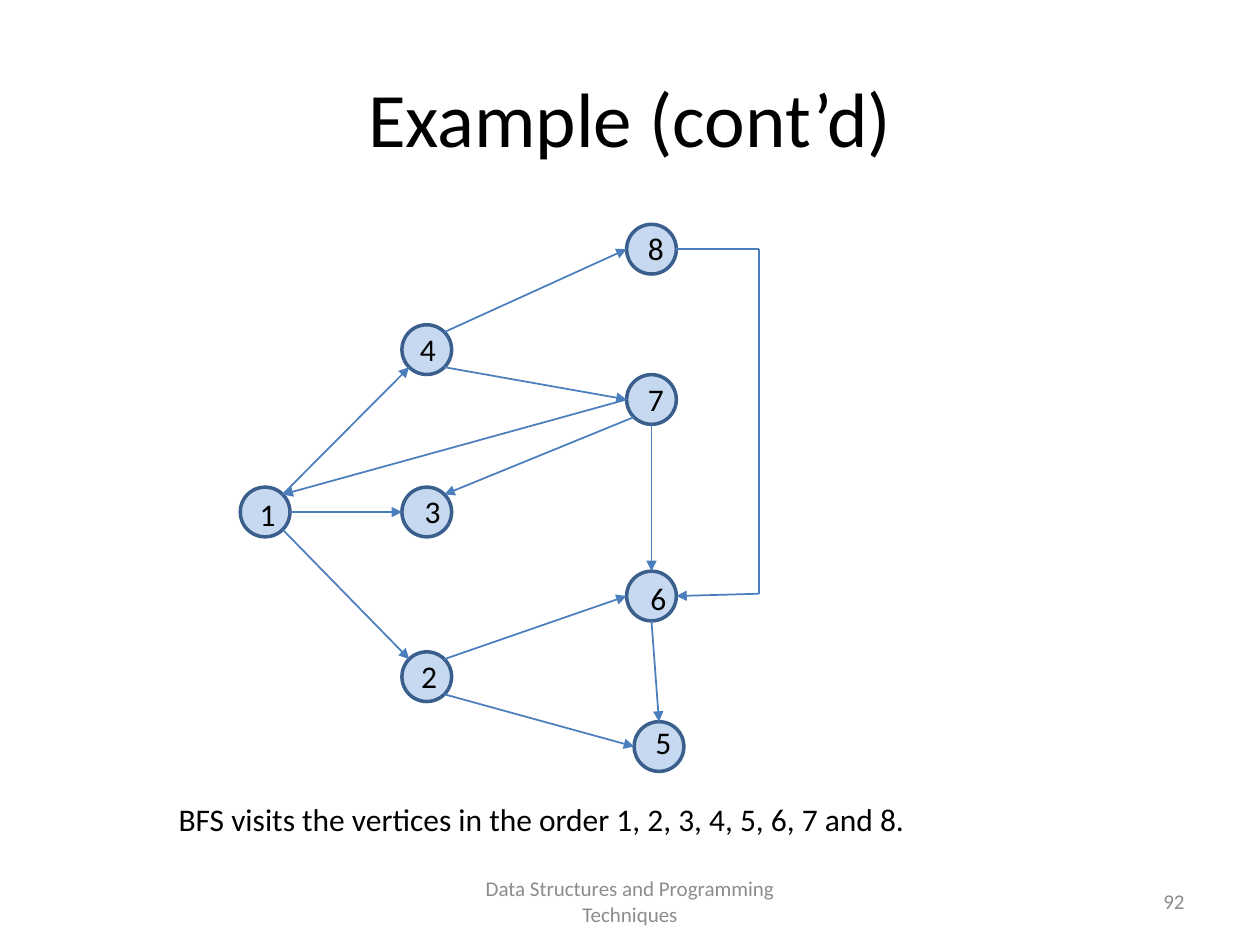
import math

from lxml import etree
from pptx import Presentation
from pptx import util as u
from pptx.dml.color import RGBColor
from pptx.enum import shapes, text
from pptx.oxml.ns import qn

FONT = "Calibri"
BLACK, GREY = "000000", "8C8C8C"
NODE_FILL, NODE_LINE, EDGE_LINE = "C6D9F1", "3A5F8C", "4B7EBC"
DIAMETER = 28.4
LABEL_SIZE = (20.2, 28.8)

# vertex: (left, top) of its circle, (left, top) of its label
VERTICES = {
    1: ((137.3, 278.4), (141.1, 279.4)),
    2: ((229.7, 372.5), (233.3, 372.2)),
    3: ((229.7, 278.4), (235.4, 277.9)),
    4: ((229.7, 185.6), (232.6, 185)),
    8: ((358.1, 128.2), (362.9, 127.4)),
    5: ((362.4, 412.4), (367.2, 409.7)),
    6: ((358.1, 326.4), (364.3, 327.6)),
    7: ((358.1, 214.1), (362.9, 213.8)),
}

# direction of each contact point on a circle, in degrees clockwise from the right
ANGLES = {"right": 0, "bottom right": 45, "bottom": 90, "bottom left": 135,
          "left": 180, "top left": 225, "top": 270, "top right": 315}

EDGES = [
    (1, "top right", 4, "bottom left"),
    (1, "right", 3, "left"),
    (1, "bottom right", 2, "top left"),
    (2, "top right", 6, "left"),
    (2, "bottom right", 5, "left"),
    (4, "top right", 8, "left"),
    (4, "bottom right", 7, "left"),
    (7, "left", 1, "top right"),
    (7, "bottom left", 3, "top right"),
    (7, "bottom", 6, "top"),
    (6, "bottom", 5, "top"),
]


def rgb(value):
    return RGBColor.from_string(value)


def points(*values):
    return [u.Pt(value) for value in values]


def style_paragraph(para, size, color, align):
    para.alignment = align
    para.font.name = FONT
    para.font.size = u.Pt(size)
    para.font.color.rgb = rgb(color)


def add_title(page, words):
    title = page.shapes.title
    title.left, title.top, title.width, title.height = points(36, 21.6, 648, 90)
    title.text_frame.text = words
    title.text_frame.vertical_anchor = text.MSO_ANCHOR.MIDDLE
    style_paragraph(title.text_frame.paragraphs[0], 44, BLACK, text.PP_ALIGN.CENTER)


def add_text(page, words, place, size=18, color=BLACK, align=text.PP_ALIGN.LEFT,
             anchor=text.MSO_ANCHOR.TOP):
    box = page.shapes.add_textbox(*points(*place))
    frame = box.text_frame
    frame.word_wrap = True
    frame.vertical_anchor = anchor
    frame.text = words
    style_paragraph(frame.paragraphs[0], size, color, align)
    return frame


def add_vertex(page, place):
    circle = page.shapes.add_shape(
        shapes.MSO_SHAPE.OVAL, *points(*place, DIAMETER, DIAMETER))
    circle.shadow.inherit = False
    circle.fill.solid()
    circle.fill.fore_color.rgb = rgb(NODE_FILL)
    circle.line.color.rgb = rgb(NODE_LINE)
    circle.line.width = u.Pt(2)


def add_label(page, vertex, place):
    frame = add_text(page, str(vertex), (*place, *LABEL_SIZE),
                     align=text.PP_ALIGN.CENTER)
    frame.margin_right = u.Pt(3.6)


def contact(vertex, side):
    """Return the point on the vertex's circle that faces the given side."""
    left, top = VERTICES[vertex][0]
    radius = DIAMETER / 2
    angle = math.radians(ANGLES[side])
    return (left + radius + radius * math.cos(angle),
            top + radius + radius * math.sin(angle))


def add_line(page, start, end, arrow=True):
    line = page.shapes.add_connector(
        shapes.MSO_CONNECTOR.STRAIGHT, *points(*start, *end))
    line.line.color.rgb = rgb(EDGE_LINE)
    line.line.width = u.Pt(1)
    if arrow:
        etree.SubElement(line.line._get_or_add_ln(), qn("a:tailEnd"), type="triangle")
    etree.SubElement(line._element.spPr, qn("a:effectLst"))


def add_detour(page):
    """Lead the edge from 8 to 6 around the right side of the graph."""
    start, end = contact(8, "right"), contact(6, "right")
    upper, lower = (433.6, start[1]), (433.6, 339.3)
    add_line(page, start, upper, arrow=False)
    add_line(page, upper, lower, arrow=False)
    add_line(page, lower, end)


def main():
    deck = Presentation()
    deck.slide_width, deck.slide_height = points(720, 540)
    page = deck.slides.add_slide(deck.slide_layouts[5])

    add_title(page, "Example (cont’d)")
    add_text(page, "Data Structures and Programming Techniques",
             (246, 500.5, 228, 28.8), 12, GREY,
             text.PP_ALIGN.CENTER, text.MSO_ANCHOR.MIDDLE)
    add_text(page, "92", (516, 500.5, 168, 28.8), 12, GREY,
             text.PP_ALIGN.RIGHT, text.MSO_ANCHOR.MIDDLE)

    for circle_place, _ in VERTICES.values():
        add_vertex(page, circle_place)
    for source, source_side, target, target_side in EDGES:
        add_line(page, contact(source, source_side), contact(target, target_side))
    add_detour(page)
    for vertex, (_, label_place) in sorted(VERTICES.items()):
        add_label(page, vertex, label_place)

    add_text(page, "BFS visits the vertices in the order 1, 2, 3, 4, 5, 6, 7 and 8.",
             (95, 453.6, 554.4, 28.8))
    deck.save("out.pptx")


if __name__ == "__main__":
    main()
